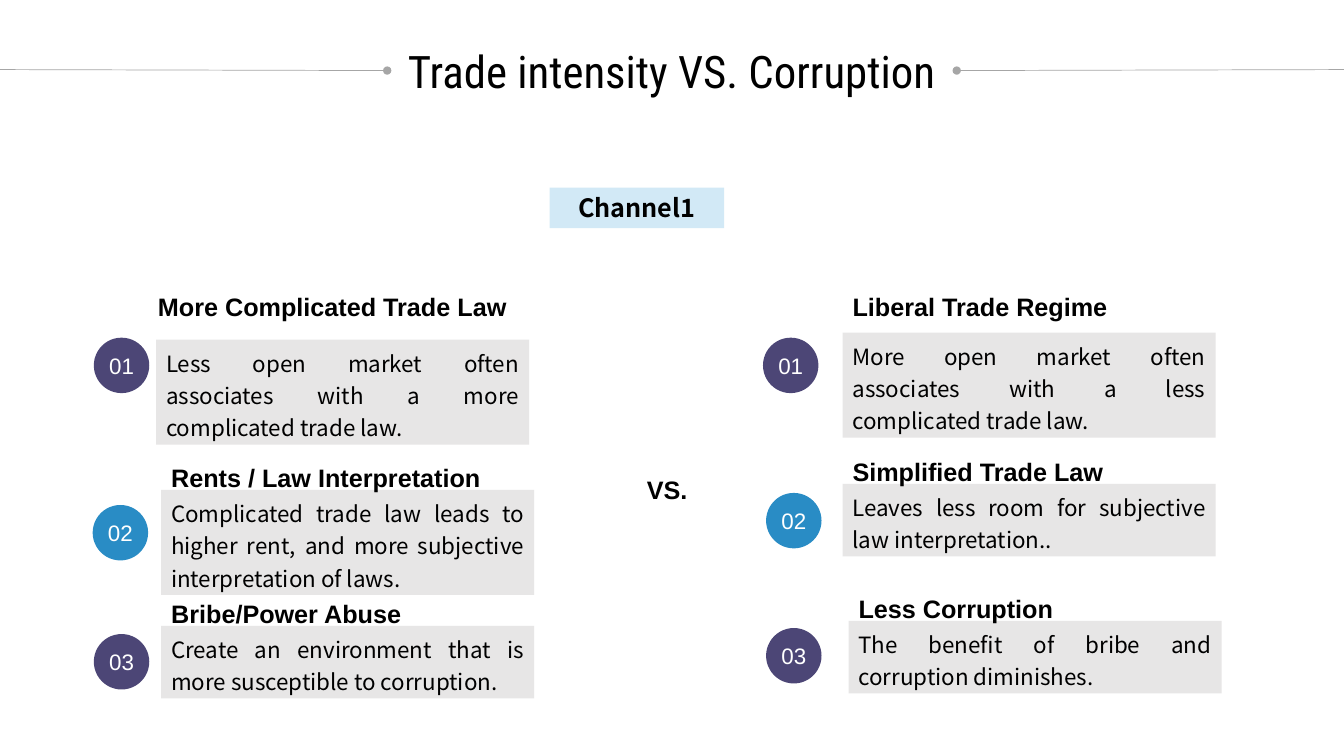
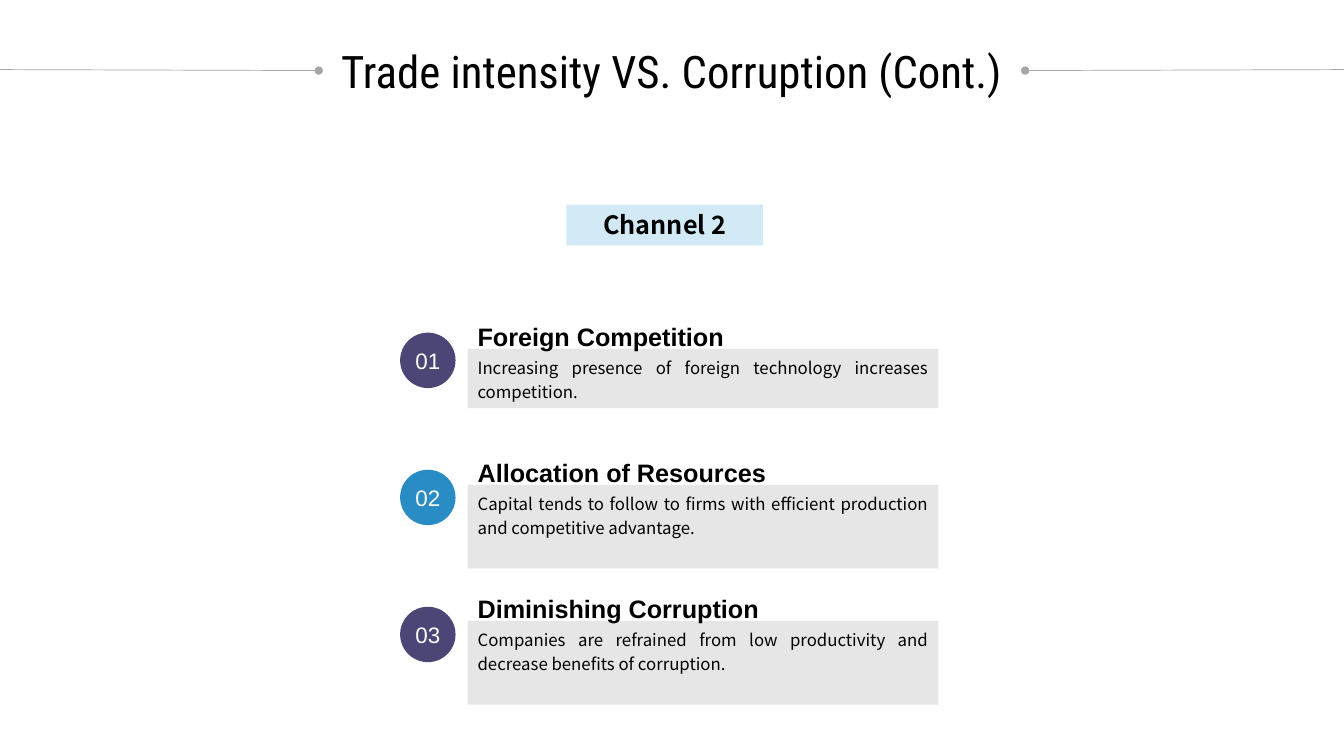
"""Build two slides that compare trade intensity with corruption."""
from lxml import etree
from pptx import Presentation
from pptx.dml.color import RGBColor
from pptx.enum.shapes import MSO_CONNECTOR, MSO_SHAPE
from pptx.enum.text import MSO_ANCHOR, PP_ALIGN
from pptx.oxml.ns import qn
from pptx.util import Pt

RECTANGLE, OVAL = MSO_SHAPE.RECTANGLE, MSO_SHAPE.OVAL
STRAIGHT = MSO_CONNECTOR.STRAIGHT
LEFT, CENTER, JUSTIFY = PP_ALIGN.LEFT, PP_ALIGN.CENTER, PP_ALIGN.JUSTIFY
TOP, MIDDLE = MSO_ANCHOR.TOP, MSO_ANCHOR.MIDDLE

WIDTH, HEIGHT = 960, 540
RULE_Y, TITLE_TOP, TITLE_HEIGHT = 49.7, 27.4, 46
BADGE_SIZE, HEADING_HEIGHT, HEADING_LEAD = 39.6, 31, 27.4
TITLE_LAYOUT = 5

COLORS = {
    "text": "000000",
    "badge_text": "FFFFFF",
    "rule": "A6A6A6",
    "panel": "E7E6E6",
    "channel": "D2E9F6",
    "purple": "4C4676",
    "blue": "298CC5",
}
BADGE_FILLS = ["purple", "blue", "purple"]

TITLE = {"name": "Roboto Condensed", "size": Pt(32), "bold": False}
HEADING = {"name": "Arial", "size": Pt(18), "bold": True}
BADGE = {"name": "Arial", "size": Pt(16), "bold": False}
CHANNEL = {"name": "Noto Sans CJK SC", "size": Pt(18), "bold": True}
BODY = {"name": "Noto Sans CJK SC", "size": Pt(16), "bold": False}
SMALL_BODY = {**BODY, "size": Pt(12)}

# Each entry: heading, body, badge corner, panel corner, panel height, heading offset
SLIDES = [
    {
        "title": "Trade intensity VS. Corruption",
        "title_width": 406.8,
        "channel": ("Channel1", (392.6, 134, 124.6, 29)),
        "versus": ("VS.", (455, 335.5, 44, 29)),
        "panel_width": 266.4,
        "body": BODY,
        "columns": [
            [
                ("More Complicated Trade Law",
                 "Less open market often associates with a more complicated trade law.",
                 (67, 241.2), (111.6, 242.6), 75, (-5.8, -42.4)),
                ("Rents / Law Interpretation",
                 "Complicated trade law leads to higher rent, and more subjective "
                 "interpretation of laws.",
                 (66.2, 360.7), (115.2, 350), 75, (0, -HEADING_LEAD)),
                ("Bribe/Power Abuse",
                 "Create an environment that is more susceptible to corruption.",
                 (67, 452.9), (115.2, 447.1), 51.8, (0, -HEADING_LEAD)),
            ],
            [
                ("Liberal Trade Regime",
                 "More open market often associates with a less complicated trade law.",
                 (545, 241.2), (601.9, 237.6), 75, (0, -37.4)),
                ("Simplified Trade Law",
                 "Leaves less room for subjective law interpretation..",
                 (547.2, 352.1), (601.9, 345.6), 51.8, (0, -HEADING_LEAD)),
                ("Less Corruption",
                 "The benefit of bribe and corruption diminishes.",
                 (547.2, 448.6), (606.2, 443.5), 51.8, (0, -HEADING_LEAD)),
            ],
        ],
    },
    {
        "title": "Trade intensity VS. Corruption (Cont.)",
        "title_width": 504.6,
        "channel": ("Channel 2", (404.6, 146.2, 140.4, 29)),
        "versus": None,
        "panel_width": 336.2,
        "body": SMALL_BODY,
        "columns": [
            [
                ("Foreign Competition",
                 "Increasing presence of foreign technology increases competition.",
                 (285.8, 237.6), (334.1, 249.1), 42.5, (0, -HEADING_LEAD)),
                ("Allocation of Resources",
                 "Capital tends to follow to firms with efficient production and "
                 "competitive advantage.",
                 (285.8, 335.5), (334.1, 346.3), 59.8, (0, -HEADING_LEAD)),
                ("Diminishing Corruption",
                 "Companies are refrained from low productivity and decrease "
                 "benefits of corruption.",
                 (285.8, 433.4), (334.1, 443.5), 59.8, (0, -HEADING_LEAD)),
            ],
        ],
    },
]


def color(name):
    """Return the named colour."""
    return RGBColor.from_string(COLORS[name])


def write(box, text, font, align, ink="text", spacing=1.0, anchor=TOP, wrap=True):
    """Put one formatted paragraph into a box."""
    frame = box.text_frame
    frame.word_wrap = wrap
    frame.vertical_anchor = anchor
    para = frame.paragraphs[0]
    para.alignment = align
    para.line_spacing = spacing
    span = para.add_run()
    span.text = text
    for key, value in font.items():
        setattr(span.font, key, value)
    span.font.color.rgb = color(ink)


def add_filled(page, kind, frame, fill):
    """Add a flat shape without outline."""
    shape = page.shapes.add_shape(kind, *map(Pt, frame))
    shape.shadow.inherit = False
    shape.fill.solid()
    shape.fill.fore_color.rgb = color(fill)
    shape.line.fill.background()
    return shape


def add_rule(page, start, end, dot_tag):
    """Add a thin rule with a dot at one end."""
    rule = page.shapes.add_connector(STRAIGHT, *map(Pt, start + end))
    rule.line.width = Pt(0.5)
    rule.line.color.rgb = color("rule")
    etree.SubElement(rule.line._get_or_add_ln(), qn(dot_tag), type="oval")
    etree.SubElement(rule._element.spPr, qn("a:effectLst"))
    return rule


def add_title(page, text, width):
    """Place the title and join a rule to each of its sides."""
    title = page.shapes.title
    left = (WIDTH - width) / 2
    frame = {"left": left, "top": TITLE_TOP, "width": width, "height": TITLE_HEIGHT}
    for key, value in frame.items():
        setattr(title, key, Pt(value))
    write(title, text, TITLE, CENTER, anchor=MIDDLE, wrap=False)
    middle = TITLE_TOP + TITLE_HEIGHT / 2
    left_rule = add_rule(page, (0, RULE_Y), (left, middle), "a:tailEnd")
    left_rule.end_connect(title, 1)
    right_rule = add_rule(page, (left + width, middle), (WIDTH, RULE_Y), "a:headEnd")
    right_rule.begin_connect(title, 3)


def add_entry(page, number, entry, panel_width, body_font):
    """Add a numbered badge, a grey panel and its heading."""
    heading, body, corner, (left, top), height, (shift, lead) = entry
    badge = add_filled(page, OVAL, (*corner, BADGE_SIZE, BADGE_SIZE),
                       BADGE_FILLS[number - 1])
    write(badge, f"{number:02}", BADGE, CENTER, "badge_text", anchor=MIDDLE, wrap=False)
    panel = add_filled(page, RECTANGLE, (left, top, panel_width, height), "panel")
    write(panel, body, body_font, JUSTIFY, spacing=1.2)
    frame = (left + shift, top + lead, panel_width, HEADING_HEIGHT)
    write(page.shapes.add_textbox(*map(Pt, frame)), heading, HEADING, JUSTIFY, spacing=1.2)


def add_page(deck, content):
    """Add one slide from its content."""
    page = deck.slides.add_slide(deck.slide_layouts[TITLE_LAYOUT])
    add_title(page, content["title"], content["title_width"])
    label, frame = content["channel"]
    write(add_filled(page, RECTANGLE, frame, "channel"), label, CHANNEL, CENTER)
    if content["versus"]:
        label, frame = content["versus"]
        write(page.shapes.add_textbox(*map(Pt, frame)), label, HEADING, LEFT, wrap=False)
    for column in content["columns"]:
        for number, entry in enumerate(column, 1):
            add_entry(page, number, entry, content["panel_width"], content["body"])


def main():
    """Build and save the deck."""
    deck = Presentation()
    deck.slide_width, deck.slide_height = Pt(WIDTH), Pt(HEIGHT)
    for content in SLIDES:
        add_page(deck, content)
    deck.save("out.pptx")


if __name__ == "__main__":
    main()
